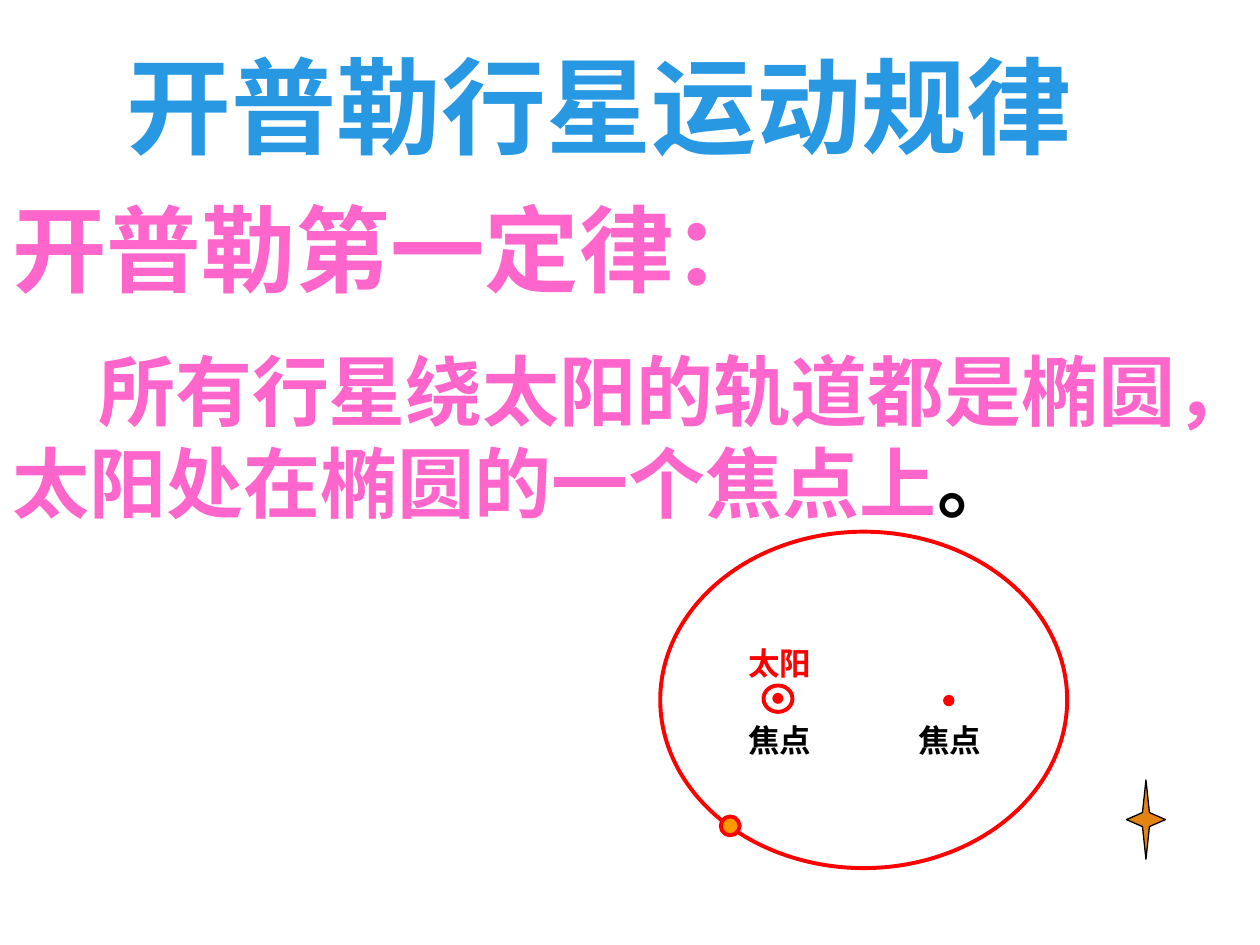
import pptx
import pptx.util
import pptx.dml.color
import pptx.enum.shapes
import pptx.enum.text

Inches = pptx.util.Inches
Pt = pptx.util.Pt
SHAPES = pptx.enum.shapes.MSO_SHAPE
RED, PINK, BLACK = "FF0000", "FF66CC", "000000"


def color(hex_text):
    return pptx.dml.color.RGBColor.from_string(hex_text)


def format_span(span, size, hex_text, bold=True, font="Arial"):
    span.font.name = font
    span.font.size = Pt(size)
    span.font.bold = bold
    span.font.color.rgb = color(hex_text)


def add_figure(parent, kind, box, line, width, fill=None):
    shape = parent.shapes.add_shape(kind, *map(Inches, box))
    shape.shadow.inherit = False
    if fill:
        shape.fill.solid()
        shape.fill.fore_color.rgb = color(fill)
    else:
        shape.fill.background()
    shape.line.color.rgb = color(line)
    shape.line.width = Pt(width)
    return shape


def add_label(parent, text, box, hex_text):
    label = parent.shapes.add_textbox(*map(Inches, box))
    label.text_frame.word_wrap = True
    para = label.text_frame.paragraphs[0]
    para.text = text
    format_span(para.runs[0], 18, hex_text)


def place_title(page, box):
    title = page.shapes.title
    title.left, title.top, title.width, title.height = map(Inches, box)
    frame = title.text_frame
    frame.text = "开普勒行星运动规律"
    frame.word_wrap = True
    frame.auto_size = pptx.enum.text.MSO_AUTO_SIZE.NONE
    frame.vertical_anchor = pptx.enum.text.MSO_ANCHOR.TOP
    para = frame.paragraphs[0]
    para.alignment = pptx.enum.text.PP_ALIGN.LEFT
    para.line_spacing = 1.0
    para.space_before = Pt(0)
    format_span(para.runs[0], 60, "2998E3")


def add_law(page, box):
    frame = page.shapes.add_textbox(*map(Inches, box)).text_frame
    frame.word_wrap = True
    heading = frame.paragraphs[0]
    heading.text = "开普勒第一定律："
    format_span(heading.runs[0], 54, PINK)

    # Statement with an indented first line and a black full stop
    statement = frame.add_paragraph()
    statement.space_before = Pt(22)
    statement.text = "所有行星绕太阳的轨道都是椭圆，太阳处在椭圆的一个焦点上"
    statement.add_run().text = "。"
    for span, hex_text in zip(statement.runs, (PINK, BLACK)):
        format_span(span, 44, hex_text)
    properties = statement._p.get_or_add_pPr()
    properties.set("marL", "0")
    properties.set("indent", str(Inches(0.68)))


def add_orbit(page, box):
    left, top, width, height = box
    group = page.shapes.add_group_shape()
    add_figure(group, SHAPES.OVAL, box, RED, 2.25)

    # Names of the sun and the two foci
    for text, x, y, hex_text in (
        ("焦点", 0.6, 1.45, BLACK),
        ("太阳", 0.6, 0.84, RED),
        ("焦点", 1.95, 1.45, BLACK),
    ):
        add_label(group, text, (left + x, top + y, 0.98, 0.4), hex_text)

    # Empty focus
    add_figure(group, SHAPES.OVAL, (left + 2.25, top + 1.3, 0.08, 0.08),
               RED, 0.75, RED)

    # Sun: a ring with a dot in it
    sun = add_figure(group, SHAPES.OVAL, (left + 0.82, top + 1.22, 0.23, 0.21),
                     RED, 2.25)
    frame = sun.text_frame
    frame.word_wrap = False
    frame.vertical_anchor = pptx.enum.text.MSO_ANCHOR.MIDDLE
    para = frame.paragraphs[0]
    para.text = "●"
    para.alignment = pptx.enum.text.PP_ALIGN.CENTER
    format_span(para.runs[0], 7, RED, False, "Noto Sans CJK SC")

    # Planet on the orbit
    add_figure(group, SHAPES.OVAL, (left + 0.48, top + 2.26, 0.15, 0.15),
               RED, 2.25, "FF9900")


def add_star(page, box):
    star = add_figure(page, SHAPES.STAR_4_POINT, box, BLACK, 0.75, "E48312")
    star.adjustments[0] = 0.125


def main():
    deck = pptx.Presentation()
    deck.slide_width, deck.slide_height = Inches(10), Inches(7.5)
    page = deck.slides.add_slide(deck.slide_layouts[5])
    place_title(page, (0.9, 0.28, 9.1, 1.1))
    add_law(page, (0, 1.47, 9.73, 2.83))
    add_star(page, (8.94, 6.19, 0.31, 0.63))
    add_orbit(page, (5.24, 4.22, 3.23, 2.67))
    deck.save("out.pptx")


if __name__ == "__main__":
    main()
